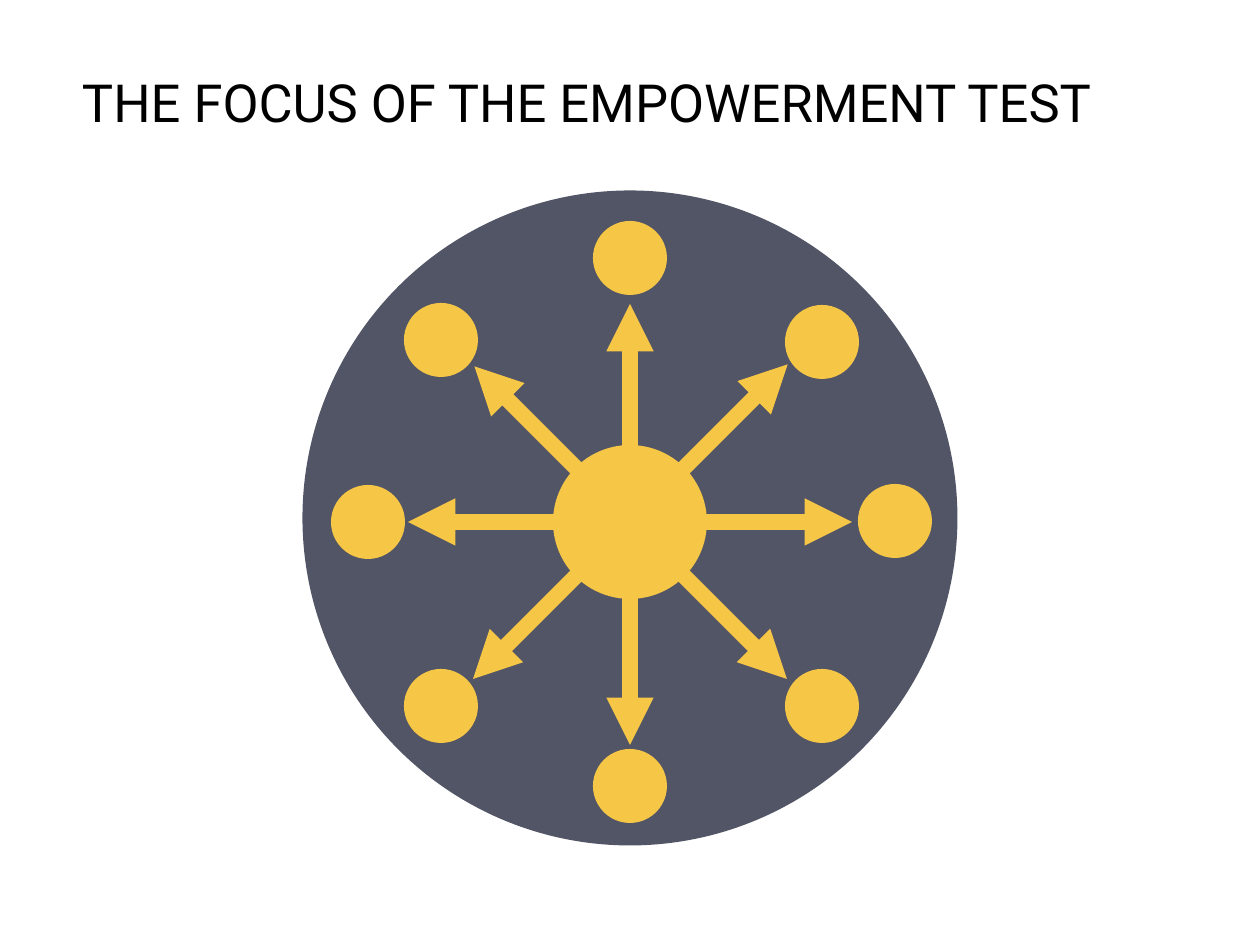
from math import cos, radians, sin

from lxml.etree import SubElement
from pptx import Presentation
from pptx.dml.color import RGBColor
from pptx.enum.shapes import MSO_CONNECTOR, MSO_SHAPE
from pptx.enum.text import MSO_ANCHOR, MSO_AUTO_SIZE, PP_ALIGN
from pptx.oxml.ns import qn
from pptx.util import Emu, Pt

SLATE = RGBColor(0x52, 0x55, 0x65)
YELLOW = RGBColor(0xF6, 0xC6, 0x46)
BLACK = RGBColor(0, 0, 0)

EMU_PER_PX = 914400 / 126
HUB_CENTER = (630, 522)
ARROW_LENGTH = 169
ARROW_TIP_RADII = (222, 222, 223, 222, 222, 220, 218, 223)
DOT_DIAMETER = 74
DOT_CENTERS = (
    (895, 521), (822, 706), (630, 786), (441, 706),
    (368, 522), (441, 340), (630, 258), (822, 342),
)


def px(length):
    return Emu(round(length * EMU_PER_PX))


def set_attributes(target, values):
    for name, value in values.items():
        setattr(target, name, value)


def format_title(title, text):
    set_attributes(title, {
        "left": px(76), "top": px(23), "width": px(1128), "height": px(158),
    })
    frame = title.text_frame
    frame.text = text
    set_attributes(frame, {
        "word_wrap": True, "auto_size": MSO_AUTO_SIZE.NONE,
        "vertical_anchor": MSO_ANCHOR.MIDDLE,
        "margin_left": px(6), "margin_right": px(6),
        "margin_top": px(6), "margin_bottom": px(6),
    })
    paragraph = frame.paragraphs[0]
    paragraph.alignment = PP_ALIGN.LEFT
    font = paragraph.runs[0].font
    set_attributes(font, {"name": "Roboto", "size": Pt(30)})
    font.color.rgb = BLACK


def add_circle(shapes, center, diameter, color):
    left, top = (px(position - diameter / 2) for position in center)
    circle = shapes.add_shape(
        MSO_SHAPE.OVAL, left, top, px(diameter), px(diameter))
    circle.shadow.inherit = False
    circle.fill.solid()
    circle.fill.fore_color.rgb = color
    circle.line.fill.background()


def point_on_spoke(angle, radius):
    x, y = HUB_CENTER
    return (px(x + radius * cos(radians(angle))),
            px(y + radius * sin(radians(angle))))


def add_arrow(shapes, angle, tip_radius):
    start = point_on_spoke(angle, tip_radius - ARROW_LENGTH)
    tip = point_on_spoke(angle, tip_radius)
    arrow = shapes.add_connector(MSO_CONNECTOR.STRAIGHT, *start, *tip)
    arrow.line.width = Pt(9)
    arrow.line.color.rgb = YELLOW
    properties = arrow.element.spPr
    SubElement(properties.find(qn("a:ln")), qn("a:tailEnd"), type="triangle")
    SubElement(properties, qn("a:effectLst"))


def main():
    presentation = Presentation()
    set_attributes(presentation, {
        "slide_width": px(1260), "slide_height": px(945),
    })
    slide = presentation.slides.add_slide(presentation.slide_layouts[5])
    shapes = slide.shapes
    format_title(shapes.title, "THE FOCUS OF THE EMPOWERMENT TEST")
    add_circle(shapes, (630, 518), 655, SLATE)
    arrows = shapes.add_group_shape().shapes
    for index, tip_radius in enumerate(ARROW_TIP_RADII):
        add_arrow(arrows, index * 45, tip_radius)
    add_circle(shapes, HUB_CENTER, 154, YELLOW)
    for center in DOT_CENTERS:
        add_circle(shapes, center, DOT_DIAMETER, YELLOW)
    presentation.save("out.pptx")


if __name__ == "__main__":
    main()
